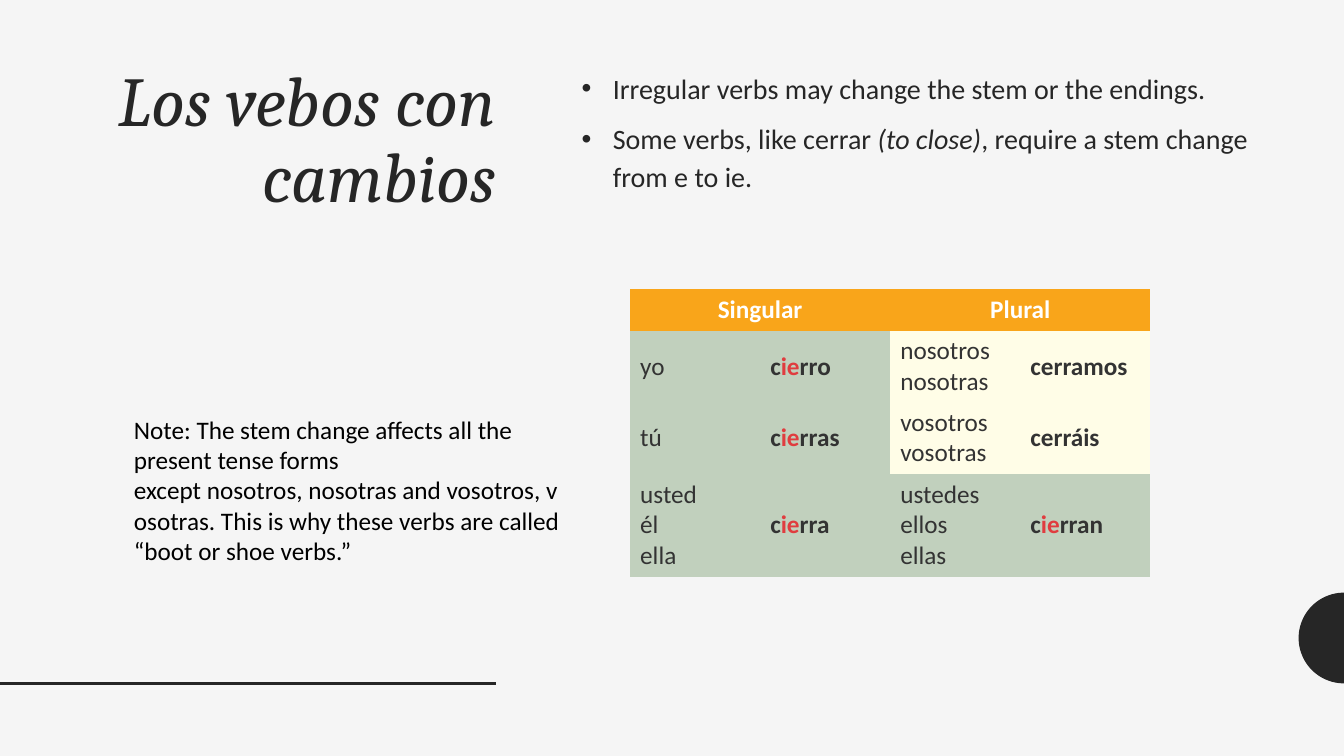
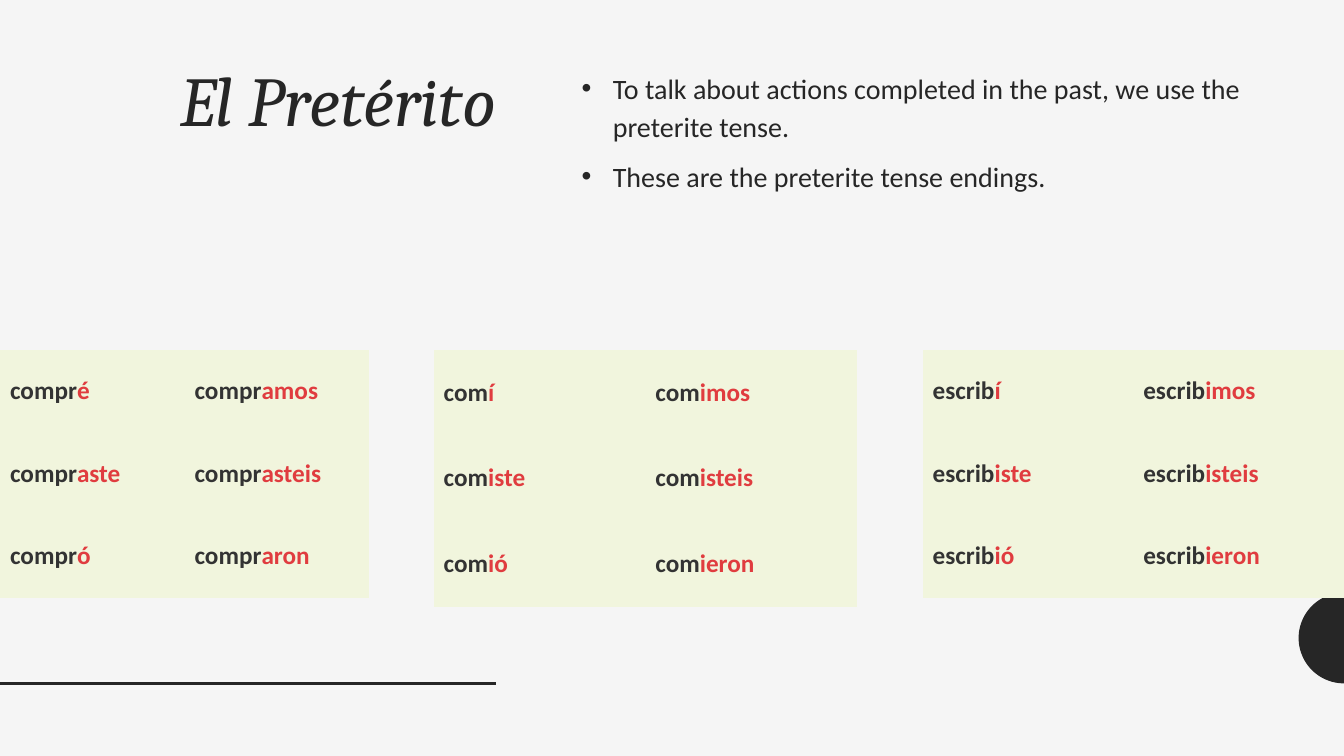
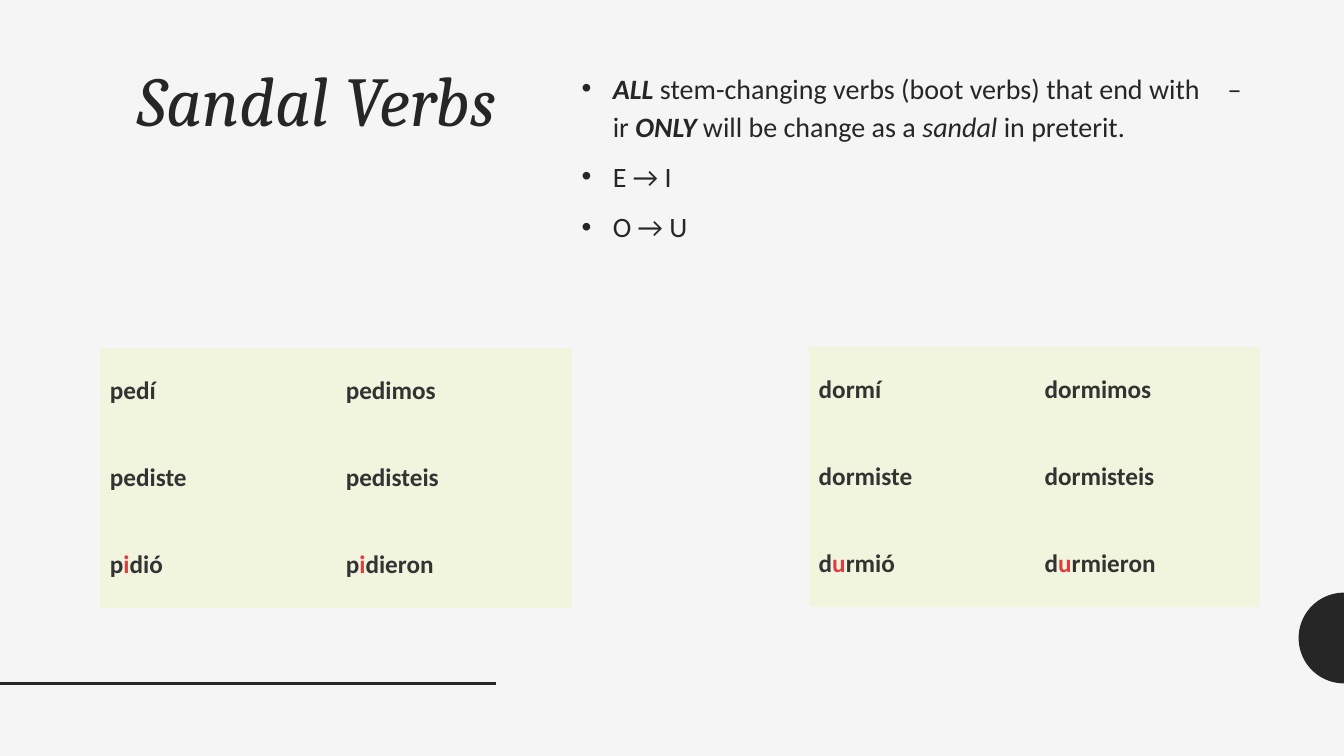
import math
from dataclasses import dataclass

from lxml import etree
from pptx import Presentation
from pptx import util as u
from pptx.dml.color import RGBColor
from pptx.enum import shapes, text
from pptx.oxml import ns

EMU_PER_PX = 9144
FIXED_SPACE = chr(160)
EM_SPACE = chr(8195)


@dataclass(frozen=True)
class Theme:
    background: str = "F5F5F5"
    ink: str = "262626"
    note: str = "000000"
    cell_ink: str = "333333"
    accent: str = "E03C3F"
    header: str = "F9A51A"
    header_ink: str = "FFFFFF"
    changed: str = "C1D0BD"
    regular: str = "FFFDE7"
    verbs: str = "F1F5DD"
    title_font: str = "Cambria"
    body_font: str = "Calibri"
    title_size: int = 50
    body_size: int = 20
    small_size: int = 18
    plain_table: str = "{2D5ABB26-0587-4C30-8999-92F81FD0307C}"


def px(length):
    return u.Emu(round(length * EMU_PER_PX))


def color(value):
    return RGBColor.from_string(value)


class Deck:
    def __init__(self, theme):
        self.theme = theme
        self.deck = Presentation()
        self.deck.slide_width = px(1333)
        self.deck.slide_height = px(750)
        fill = self.deck.slide_master.background.fill
        fill.solid()
        fill.fore_color.rgb = color(theme.background)
        self.page = None

    def new_page(self, title):
        self.page = self.deck.slides.add_slide(self.deck.slide_layouts[6])
        self.half_circle(1333, 633, 45)
        self.rule(0, 678, 492)
        para = self.text_box(83, 61, 419, 542).paragraphs[0]
        para.alignment = text.PP_ALIGN.RIGHT
        para.line_spacing = 0.9
        self.span(para, title, self.theme.title_size, self.theme.ink,
                  italic=True, font=self.theme.title_font)

    def half_circle(self, right, middle, radius):
        angles = [math.pi * (0.5 + step / 48) for step in range(49)]
        points = [(px(right + radius * math.cos(angle)),
                   px(middle - radius * math.sin(angle))) for angle in angles]
        builder = self.page.shapes.build_freeform(*points[0])
        builder.add_line_segments(points[1:], close=True)
        shape = builder.convert_to_shape()
        shape.shadow.inherit = False
        shape.fill.solid()
        shape.fill.fore_color.rgb = color(self.theme.ink)
        shape.line.fill.background()

    def rule(self, left, top, right):
        line = self.page.shapes.add_connector(
            shapes.MSO_CONNECTOR.STRAIGHT, px(left), px(top), px(right), px(top))
        line.line.color.rgb = color(self.theme.ink)
        line.line.width = u.Pt(2)
        etree.SubElement(line._element.spPr, ns.qn("a:effectLst"))

    def text_box(self, left, top, width, height):
        box = self.page.shapes.add_textbox(px(left), px(top), px(width), px(height))
        box.text_frame.word_wrap = True
        return box.text_frame

    def span(self, para, words, size, ink, bold=False, italic=False, font=None):
        for index, line in enumerate(words.split("\n")):
            if index:
                para.add_line_break()
            run = para.add_run()
            run.text = line
            run.font.name = font or self.theme.body_font
            run.font.size = u.Pt(size)
            run.font.color.rgb = color(ink)
            run.font.bold = bold
            run.font.italic = italic

    def bullets(self, items):
        frame = self.text_box(567, 62, 683, 618)
        for index, spans in enumerate(items):
            para = frame.add_paragraph() if index else frame.paragraphs[0]
            para.line_spacing = 1.12
            para.space_before = u.Pt(9)
            props = para._p.get_or_add_pPr()
            props.set("marL", str(px(31)))
            props.set("indent", str(px(-31)))
            etree.SubElement(props, ns.qn("a:buFont"), typeface="Arial")
            etree.SubElement(props, ns.qn("a:buChar"), char="•")
            for words, style in spans:
                self.span(para, words, self.theme.body_size, self.theme.ink,
                          bold="b" in style, italic="i" in style)

    def note(self, left, top, width, height, words):
        para = self.text_box(left, top, width, height).paragraphs[0]
        self.span(para, words, self.theme.small_size, self.theme.note)

    def table(self, left, top, column_width, row_heights, columns):
        frame = self.page.shapes.add_table(
            len(row_heights), columns, px(left), px(top),
            px(column_width * columns), px(sum(row_heights)))
        table = frame.table
        table.first_row = table.horz_banding = False
        table._tbl.tblPr.find(ns.qn("a:tableStyleId")).text = self.theme.plain_table
        for column in table.columns:
            column.width = px(column_width)
        for row, height in zip(table.rows, row_heights):
            row.height = px(height)
        return table

    def cell(self, cell, words, fill, ink=None, bold=True, align=text.PP_ALIGN.LEFT):
        cell.fill.solid()
        cell.fill.fore_color.rgb = color(fill)
        cell.vertical_anchor = text.MSO_ANCHOR.MIDDLE
        para = cell.text_frame.paragraphs[0]
        para.alignment = align
        for index, part in enumerate(words.split("|")):
            if part:
                part_ink = self.theme.accent if index % 2 else ink or self.theme.cell_ink
                self.span(para, part, self.theme.small_size, part_ink, bold)

    def verb_table(self, left, top, column_width, row_height, forms):
        table = self.table(left, top, column_width, [row_height] * 3, 2)
        for index, form in enumerate(forms):
            self.cell(table.cell(index // 2, index % 2), form, self.theme.verbs)

    def pronoun_table(self, left, top, column_width, row_heights, headings, rows):
        theme = self.theme
        table = self.table(left, top, column_width, row_heights, 4)
        for index, heading in enumerate(headings):
            first = table.cell(0, index * 2)
            first.merge(table.cell(0, index * 2 + 1))
            self.cell(first, heading, theme.header, theme.header_ink,
                      align=text.PP_ALIGN.CENTER)
        for number, row in enumerate(rows, 1):
            for column, words in enumerate(row):
                stem_kept = column > 1 and "|" not in row[3]
                self.cell(table.cell(number, column), words,
                          theme.regular if stem_kept else theme.changed,
                          bold=column % 2 == 1)


def stem_changes(deck):
    deck.new_page("Los vebos con cambios")
    deck.bullets([
        [("Irregular verbs may change the stem or the endings.", "")],
        [("Some verbs, like cerrar", ""),
         (FIXED_SPACE + "(to close)", "i"),
         (", require a stem change from_e_to_ie.".replace("_", FIXED_SPACE), "")],
    ])
    deck.pronoun_table(625, 287, 129, [41, 71, 71, 102], ["Singular", "Plural"], [
        ("yo", "c|ie|rro", "nosotros\nnosotras", "cerramos"),
        ("tú", "c|ie|rras", "vosotros\nvosotras", "cerráis"),
        ("usted\nél\nella", "c|ie|rra", "ustedes\nellos\nellas", "c|ie|rran"),
    ])
    deck.note(123, 406, 443, 162, (
        "Note: The_stem change affects all the present tense forms "
        "except_nosotros,_nosotras_and_vosotros,_vosotras. "
        "This is why these verbs are called “boot or shoe verbs.”"
    ).replace("_", FIXED_SPACE))


def preterite(deck):
    deck.new_page("El Pretérito")
    deck.bullets([
        [("To talk about actions completed in the past, we use the preterite tense.", "")],
        [("These are the preterite tense endings.", "")],
    ])
    ar_endings = ["é", "amos", "aste", "asteis", "ó", "aron"]
    er_ir_endings = ["í", "imos", "iste", "isteis", "ió", "ieron"]
    for left, column_width, row_height, stem, endings in [
        (0, 183, 82, "compr", ar_endings),
        (430, 210, 85, "com", er_ir_endings),
        (915, 209, 82, "escrib", er_ir_endings),
    ]:
        deck.verb_table(left, 347, column_width, row_height,
                        [f"{stem}|{ending}" for ending in endings])


def sandal_verbs(deck):
    deck.new_page("Sandal Verbs")
    deck.bullets([
        [("ALL", "bi"),
         (f" stem-changing verbs (boot verbs) that end with{EM_SPACE}–ir ", ""),
         ("ONLY", "bi"),
         (" will be change as a ", ""),
         ("sandal ", "i"),
         ("in preterit.", "")],
        [("E → I", "")],
        [("O → U", "")],
    ])
    deck.verb_table(99, 345, 234, 86, [
        "pedí", "pedimos", "pediste", "pedisteis", "p|i|dió", "p|i|dieron"])
    deck.verb_table(802, 344, 224, 86, [
        "dormí", "dormimos", "dormiste", "dormisteis", "d|u|rmió", "d|u|rmieron"])


def main():
    deck = Deck(Theme())
    for build in (stem_changes, preterite, sandal_verbs):
        build(deck)
    deck.deck.save("out.pptx")


if __name__ == "__main__":
    main()
